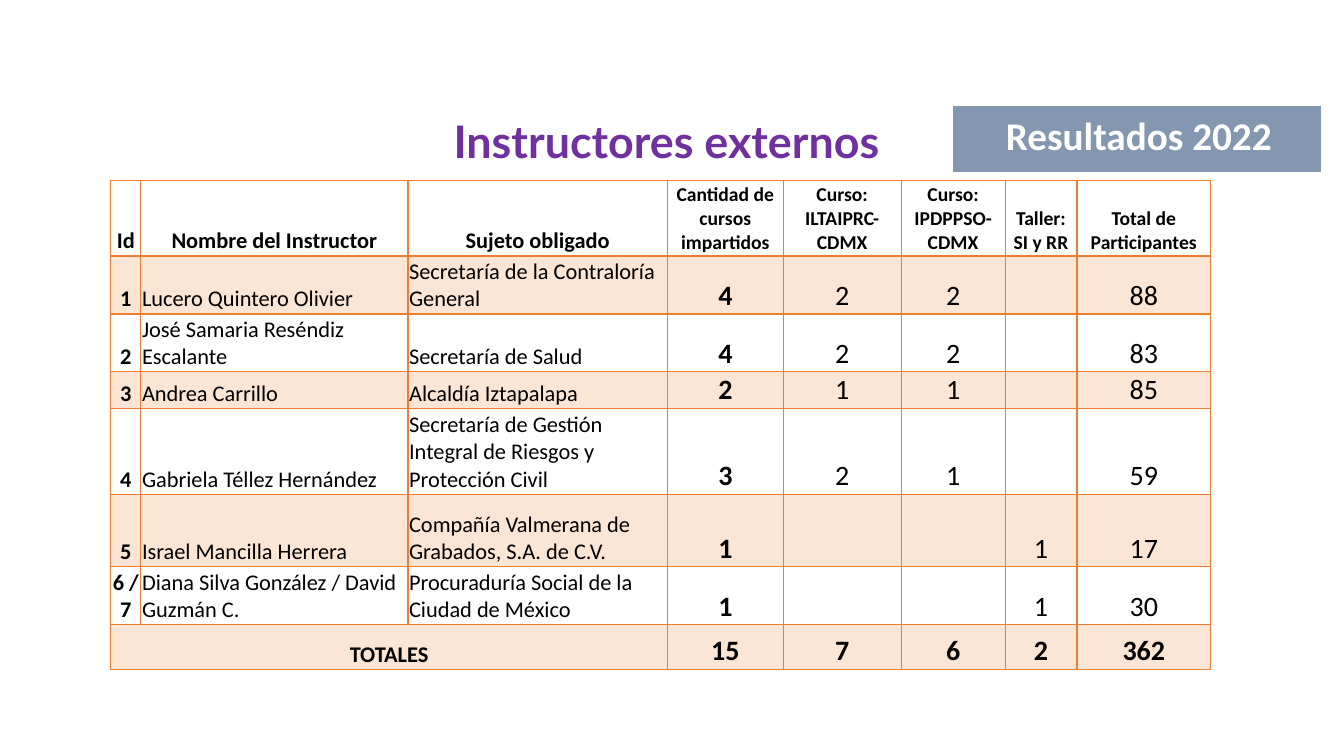
from lxml.etree import SubElement
from pptx import Presentation
from pptx.dml.color import RGBColor
from pptx.enum.shapes import MSO_SHAPE
from pptx.enum.text import MSO_ANCHOR as Anchor, PP_ALIGN as Align
from pptx.oxml.ns import qn
from pptx.util import Cm, Pt

ORANGE = RGBColor(0xED, 0x7D, 0x31)
PURPLE = RGBColor(0x70, 0x30, 0xA0)
BLUE_GREY = RGBColor(0x84, 0x97, 0xB0)
WHITE = RGBColor(0xFF, 0xFF, 0xFF)
BLACK = RGBColor(0, 0, 0)

COLUMN_WIDTHS = [0.76, 6.73, 6.54, 2.92, 2.97, 2.62, 1.81, 3.37]
ROW_HEIGHTS = [1.9, 1.46, 1.46, 0.91, 2.16, 1.83, 1.46, 1.12]
ROWS = [
    ["Id", "Nombre del Instructor", "Sujeto obligado", "Cantidad de cursos impartidos",
     "Curso:\nILTAIPRC-CDMX", "Curso:\nIPDPPSO-CDMX", "Taller:\nSI y RR",
     "Total de Participantes"],
    ["1", "Lucero Quintero Olivier", "Secretaría de la Contraloría General",
     "4", "2", "2", "", "88"],
    ["2", "José Samaria Reséndiz Escalante", "Secretaría de Salud",
     "4", "2", "2", "", "83"],
    ["3", "Andrea Carrillo", "Alcaldía Iztapalapa", "2", "1", "1", "", "85"],
    ["4", "Gabriela Téllez Hernández",
     "Secretaría de Gestión Integral de Riesgos y Protección Civil",
     "3", "2", "1", "", "59"],
    ["5", "Israel Mancilla Herrera", "Compañía Valmerana de Grabados, S.A. de C.V.",
     "1", "", "", "1", "17"],
    ["6 / 7", "Diana Silva González / David Guzmán C.",
     "Procuraduría Social de la Ciudad de México", "1", "", "", "1", "30"],
    ["TOTALES", "", "", "15", "7", "6", "2", "362"],
]
TOTALS_ROW = len(ROWS) - 1
FIRST_COUNT_COLUMN = 3


def set_font(paragraph, name, size, color, bold=True):
    font = paragraph.font
    font.name, font.size, font.bold = name, Pt(size), bold
    font.color.rgb = color


def add_heading(slide, text, box, font_name, size, color):
    """Add a one-line bold heading and return its text frame."""
    frame = slide.shapes.add_textbox(*map(Cm, box)).text_frame
    frame.word_wrap = True
    paragraph = frame.paragraphs[0]
    paragraph.text = text
    paragraph.line_spacing = 0.9
    set_font(paragraph, font_name, size, color)
    return frame


def add_banner(slide):
    banner = slide.shapes.add_shape(
        MSO_SHAPE.RECTANGLE, Cm(24), Cm(2.66), Cm(9.32), Cm(1.7))
    banner.shadow.inherit = False
    banner.fill.solid()
    banner.fill.fore_color.rgb = BLUE_GREY
    banner.line.color.rgb = WHITE
    banner.line.width = Pt(1)
    frame = add_heading(slide, "Resultados 2022", (24, 2.62, 8.53, 1.7),
                        "Calibri", 28, WHITE)
    frame.vertical_anchor = Anchor.MIDDLE
    frame.margin_left = Cm(1.35)
    frame.margin_top = frame.margin_right = frame.margin_bottom = Cm(0.2)


def set_borders(cell, row):
    """Draw orange borders, doubled between the header and the first row."""
    widths = {"L": 1, "R": 1, "T": 2 if row == 1 else 1, "B": 2 if row == 0 else 1}
    properties = cell._tc.get_or_add_tcPr()
    for side, width in widths.items():
        line = SubElement(properties, qn(f"a:ln{side}"), w=str(Pt(width)))
        fill = SubElement(line, qn("a:solidFill"))
        SubElement(fill, qn("a:srgbClr"), val=str(ORANGE))


def set_fill(cell, row):
    """Tint every odd row with translucent orange."""
    if row % 2 == 0:
        cell.fill.background()
        return
    cell.fill.solid()
    cell.fill.fore_color.rgb = ORANGE
    color = cell._tc.tcPr.find(f"{qn('a:solidFill')}/{qn('a:srgbClr')}")
    SubElement(color, qn("a:alpha"), val="20000")


def text_size(row, column):
    if column < FIRST_COUNT_COLUMN:
        return 16
    return 14 if row == 0 else 20


def fill_cell(cell, row, column, text):
    cell.vertical_anchor = Anchor.BOTTOM
    cell.margin_left = cell.margin_right = Cm(0.03)
    cell.margin_top = cell.margin_bottom = Cm(0.03)
    set_borders(cell, row)
    set_fill(cell, row)
    cell.text = text
    in_body = 0 < row < TOTALS_ROW
    for paragraph in cell.text_frame.paragraphs:
        left_aligned = in_body and column in (1, 2)
        paragraph.alignment = Align.LEFT if left_aligned else Align.CENTER
        bold = not in_body or column in (0, FIRST_COUNT_COLUMN)
        set_font(paragraph, "Calibri", text_size(row, column), BLACK, bold)


def add_instructor_table(slide):
    table = slide.shapes.add_table(
        len(ROWS), len(COLUMN_WIDTHS), Cm(2.79), Cm(4.55),
        Cm(sum(COLUMN_WIDTHS)), Cm(sum(ROW_HEIGHTS))).table
    table.first_row = table.horz_banding = False
    for column, width in zip(table.columns, COLUMN_WIDTHS):
        column.width = Cm(width)
    for row, height in zip(table.rows, ROW_HEIGHTS):
        row.height = Cm(height)
    for row, texts in enumerate(ROWS):
        for column, text in enumerate(texts):
            fill_cell(table.cell(row, column), row, column, text)
    table.cell(TOTALS_ROW, 0).merge(table.cell(TOTALS_ROW, FIRST_COUNT_COLUMN - 1))


def main():
    presentation = Presentation()
    presentation.slide_width, presentation.slide_height = Cm(33.87), Cm(19.05)
    slide = presentation.slides.add_slide(presentation.slide_layouts[6])
    add_instructor_table(slide)
    add_banner(slide)
    title = add_heading(slide, "Instructores externos", (5.85, 2.9, 21.9, 1.5),
                        "Lato", 32, PURPLE)
    title.paragraphs[0].alignment = Align.CENTER
    presentation.save("out.pptx")


if __name__ == "__main__":
    main()
